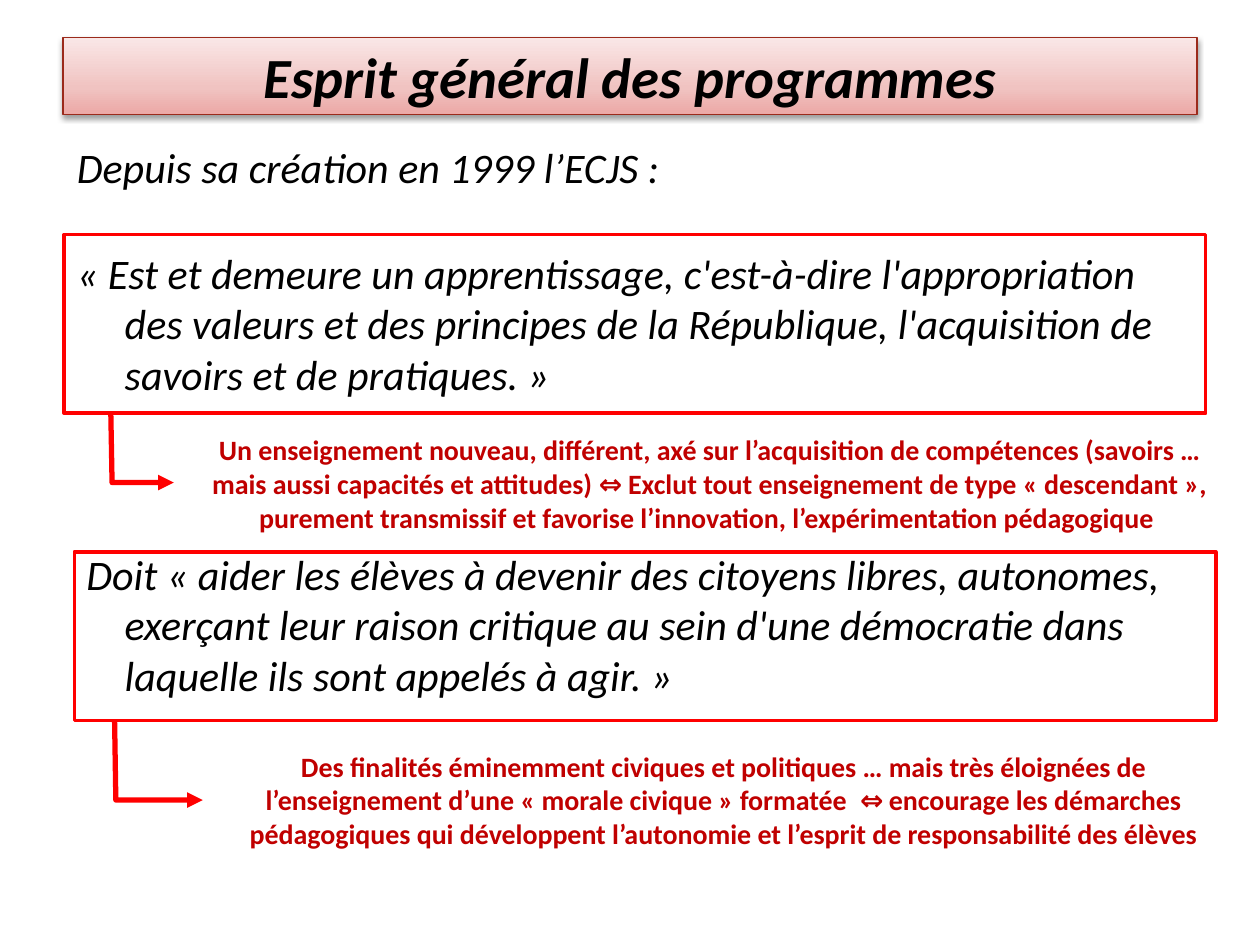
from copy import deepcopy

from lxml.etree import SubElement
from pptx import Presentation
from pptx.dml.color import RGBColor
from pptx.enum.shapes import MSO_SHAPE
from pptx.enum.text import MSO_ANCHOR, MSO_AUTO_SIZE, PP_ALIGN
from pptx.oxml.ns import qn
from pptx.util import Inches, Pt

RED = "FF0000"
TITLE_FONT = {"name": "Calibri", "size": Pt(32.4), "bold": True, "italic": True}
BODY_FONT = {"name": "Calibri", "size": Pt(24), "italic": True}
COMMENT_FONT = {"name": "Calibri", "size": Pt(16), "bold": True}

TITLE = "Esprit général des programmes"
# Text and the space above it, in points
BODY = [
    ("Depuis sa création en 1999 l’ECJS :", 5),
    ("« Est et demeure un apprentissage, c'est-à-dire l'appropriation des valeurs et des "
     "principes de la République, l'acquisition de savoirs et de pratiques. »", 32),
    (" Doit « aider les élèves à devenir des citoyens libres, autonomes, exerçant leur raison "
     "critique au sein d'une démocratie dans laquelle ils sont appelés à agir. »", 85.5),
]
# Frame, arrow corners, comment area and comment
QUOTES = [
    ((0.51, 1.86, 9.06, 1.42), [(0.88, 3.28), (0.89, 3.83), (1.38, 3.83)],
     (1.54, 3.44, 8.19, 0.79),
     "Un enseignement nouveau, différent, axé sur l’acquisition de compétences (savoirs … mais "
     "aussi capacités et attitudes) ⇔ Exclut tout enseignement de type « descendant », purement "
     "transmissif et favorise l’innovation, l’expérimentation pédagogique "),
    ((0.59, 4.38, 9.06, 1.34), [(0.91, 5.72), (0.92, 6.35), (1.61, 6.35)],
     (1.69, 5.95, 8.11, 0.79),
     "Des finalités éminemment civiques et politiques … mais très éloignées de l’enseignement "
     "d’une « morale civique » formatée  ⇔ encourage les démarches pédagogiques qui développent "
     "l’autonomie et l’esprit de responsabilité des élèves"),
]


def color(hex_value):
    return RGBColor.from_string(hex_value)


def inches(lengths):
    return [Inches(length) for length in lengths]


def place(shape, area):
    shape.left, shape.top, shape.width, shape.height = inches(area)


def add_run(paragraph, text, font_values, hex_value="000000"):
    run = paragraph.add_run()
    run.text = text
    for name, value in font_values.items():
        setattr(run.font, name, value)
    run.font.color.rgb = color(hex_value)


def set_line(shape, hex_value, width):
    shape.line.color.rgb = color(hex_value)
    shape.line.width = Pt(width)


def fill_gradient(shape, start, middle, end):
    """Fill upwards with three colours, the middle one at 35 %."""
    shape.fill.gradient()
    shape.fill.gradient_angle = 90
    first = shape._element.spPr.find(".//" + qn("a:gs"))
    first.addnext(deepcopy(first))
    stops = zip(shape.fill.gradient_stops, (start, middle, end), (0, 0.35, 1))
    for stop, hex_value, position in stops:
        stop.color.rgb = color(hex_value)
        stop.position = position


def add_shadow(shape):
    effects = SubElement(shape._element.spPr, qn("a:effectLst"))
    shadow = SubElement(effects, qn("a:outerShdw"), blurRad=str(Pt(3.1)), dist=str(Pt(1.6)),
                        dir="5400000", rotWithShape="0")
    black = SubElement(shadow, qn("a:srgbClr"), val="000000")
    SubElement(black, qn("a:alpha"), val="38000")


def format_title(title):
    place(title, (0.5, 0.3, 9, 0.61))
    fill_gradient(title, "ECA8A6", "F0C3C1", "FAE7E7")
    set_line(title, "9B2A1B", 0.75)
    add_shadow(title)
    frame = title.text_frame
    frame.auto_size = MSO_AUTO_SIZE.NONE
    frame.vertical_anchor = MSO_ANCHOR.MIDDLE
    paragraph = frame.paragraphs[0]
    paragraph.alignment = PP_ALIGN.CENTER
    add_run(paragraph, TITLE, TITLE_FONT)


def format_body(body):
    place(body, (0.51, 1.07, 9, 4.95))
    frame = body.text_frame
    frame.auto_size = MSO_AUTO_SIZE.NONE
    for index, (text, space) in enumerate(BODY):
        paragraph = frame.add_paragraph() if index else frame.paragraphs[0]
        paragraph.space_before = Pt(space)
        properties = paragraph._p.get_or_add_pPr()
        properties.set("marL", str(Inches(0.38)))
        properties.set("indent", str(Inches(-0.38)))
        SubElement(properties, qn("a:buNone"))
        add_run(paragraph, text, BODY_FONT)


def add_frame(slide, area):
    frame = slide.shapes.add_shape(MSO_SHAPE.RECTANGLE, *inches(area))
    frame.shadow.inherit = False
    frame.fill.background()
    set_line(frame, RED, 2)


def add_bent_arrow(slide, corners):
    start, *others = [tuple(inches(corner)) for corner in corners]
    builder = slide.shapes.build_freeform(*start)
    builder.add_line_segments(others, close=False)
    arrow = builder.convert_to_shape()
    arrow.shadow.inherit = False
    arrow.fill.background()
    set_line(arrow, RED, 3)
    SubElement(arrow.line._get_or_add_ln(), qn("a:tailEnd"), type="triangle")


def add_comment(slide, area, text):
    frame = slide.shapes.add_textbox(*inches(area)).text_frame
    frame.word_wrap = True
    frame.vertical_anchor = MSO_ANCHOR.MIDDLE
    paragraph = frame.paragraphs[0]
    paragraph.alignment = PP_ALIGN.CENTER
    add_run(paragraph, text, COMMENT_FONT, "C00000")


def main():
    presentation = Presentation()
    presentation.slide_width, presentation.slide_height = inches((10, 7.5))
    slide = presentation.slides.add_slide(presentation.slide_layouts[1])
    format_title(slide.shapes.title)
    format_body(slide.placeholders[1])
    for frame_area, corners, comment_area, comment in QUOTES:
        add_frame(slide, frame_area)
        add_bent_arrow(slide, corners)
        add_comment(slide, comment_area, comment)
    presentation.save("out.pptx")


if __name__ == "__main__":
    main()
